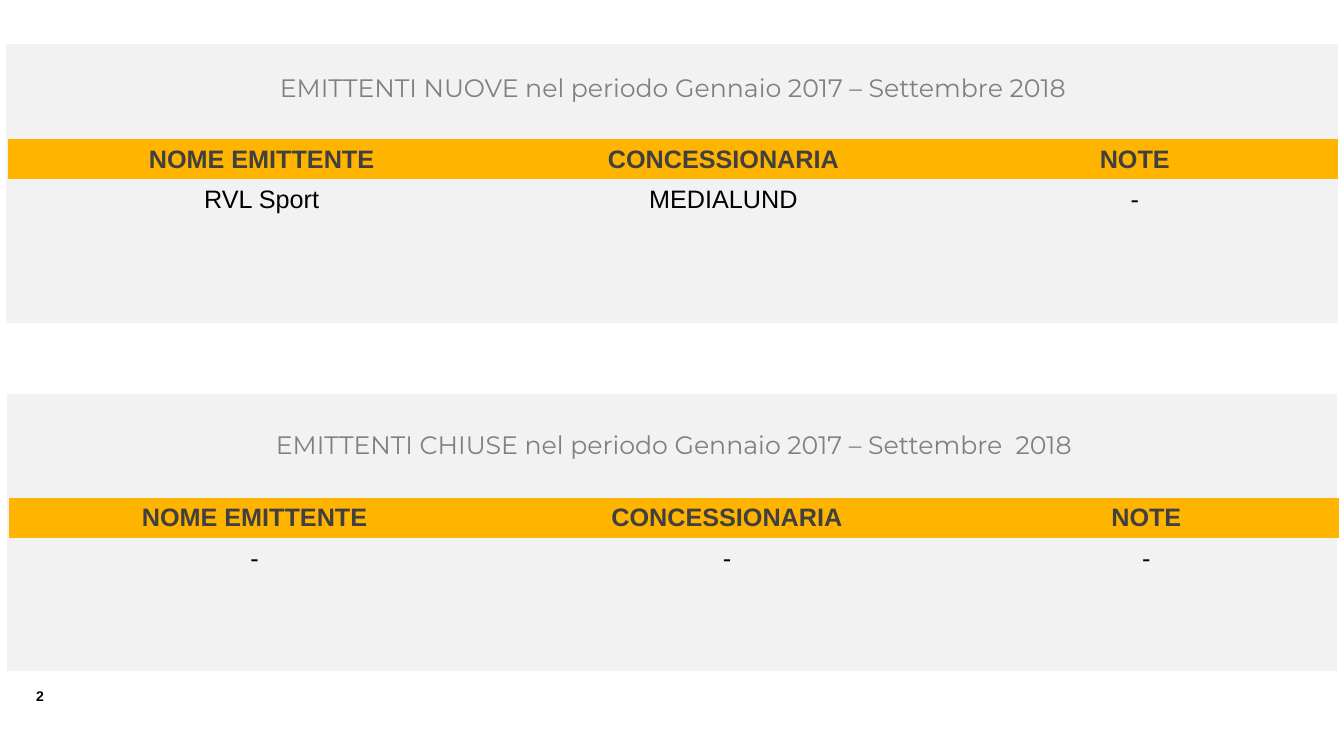
from pptx import Presentation
from pptx import util as u
from pptx.dml.color import RGBColor
from pptx.enum import shapes, text
from pptx.oxml.ns import qn

COLORS = {
    "panel": "F2F2F2",
    "white": "FFFFFF",
    "header": "FFB400",
    "header_text": "404040",
    "title": "808080",
    "body": "000000",
}
PLAIN_STYLE = "{2D5ABB26-0587-4C30-8999-92F81FD0307C}"
HEADINGS = ["NOME EMITTENTE", "CONCESSIONARIA", "NOTE"]
ROW_HEIGHTS = [0.4, 0.4, 0.4, 0.4]


def color(name):
    return RGBColor.from_string(COLORS[name])


def write(frame, content, *, size=18, font="Arial", ink="body", bold=False,
          align=text.PP_ALIGN.CENTER):
    para = frame.paragraphs[0]
    para.alignment = align
    span = para.add_run()
    span.text = content
    span.font.size = u.Pt(size)
    span.font.name = font
    span.font.bold = bold
    span.font.color.rgb = color(ink)


def add_panel(slide, top, outline):
    panel = slide.shapes.add_shape(
        shapes.MSO_SHAPE.RECTANGLE,
        u.Inches(0.06), u.Inches(top), u.Inches(13.21), u.Inches(2.76))
    panel.shadow.inherit = False
    panel.fill.solid()
    panel.fill.fore_color.rgb = color("panel")
    panel.line.color.rgb = color(outline)
    panel.line.width = u.Pt(0.75)


def add_station_table(slide, left, top, widths, title_height, title, stations):
    """Table with a merged title row, a header row and two spare rows."""
    heights = [title_height] + ROW_HEIGHTS
    frame = slide.shapes.add_table(
        len(heights), len(widths), u.Inches(left), u.Inches(top),
        u.Inches(sum(widths)), u.Inches(sum(heights)))
    table = frame.table
    table.first_row = table.horz_banding = False
    table._tbl.tblPr.find(qn("a:tableStyleId")).text = PLAIN_STYLE
    for column, width in zip(table.columns, widths):
        column.width = u.Inches(width)
    for row, height in zip(table.rows, heights):
        row.height = u.Inches(height)
    for cell in table.iter_cells():
        cell.fill.background()
        cell.vertical_anchor = text.MSO_ANCHOR.MIDDLE

    title_cell = table.cell(0, 0)
    title_cell.merge(table.cell(0, len(widths) - 1))
    title_cell.vertical_anchor = text.MSO_ANCHOR.TOP
    write(title_cell.text_frame, title, font="Montserrat", ink="title")
    for index, (heading, value) in enumerate(zip(HEADINGS, stations)):
        header = table.cell(1, index)
        header.fill.solid()
        header.fill.fore_color.rgb = color("header")
        write(header.text_frame, heading, ink="header_text", bold=True)
        write(table.cell(2, index).text_frame, value)


def add_page_number(slide, number):
    box = slide.shapes.add_textbox(
        u.Inches(0.26), u.Inches(6.77), u.Inches(0.47), u.Inches(0.27))
    box.text_frame.word_wrap = True
    write(box.text_frame, number, size=10, bold=True,
          align=text.PP_ALIGN.LEFT)


def main():
    deck = Presentation()
    deck.slide_width = u.Inches(13.33)
    deck.slide_height = u.Inches(7.5)
    slide = deck.slides.add_slide(deck.slide_layouts[6])

    add_page_number(slide, "2")
    add_panel(slide, 0.44, "panel")
    add_station_table(
        slide, 0.08, 0.68, [5.03, 4.13, 4.03], 0.7,
        "EMITTENTI NUOVE nel periodo Gennaio 2017 – Settembre 2018",
        ["RVL Sport", "MEDIALUND", "-"])
    add_panel(slide, 3.9, "white")
    add_station_table(
        slide, 0.09, 4.22, [4.87, 4.5, 3.82], 0.72,
        "EMITTENTI CHIUSE nel periodo Gennaio 2017 – Settembre  2018",
        ["-", "-", "-"])
    deck.save("out.pptx")


if __name__ == "__main__":
    main()
